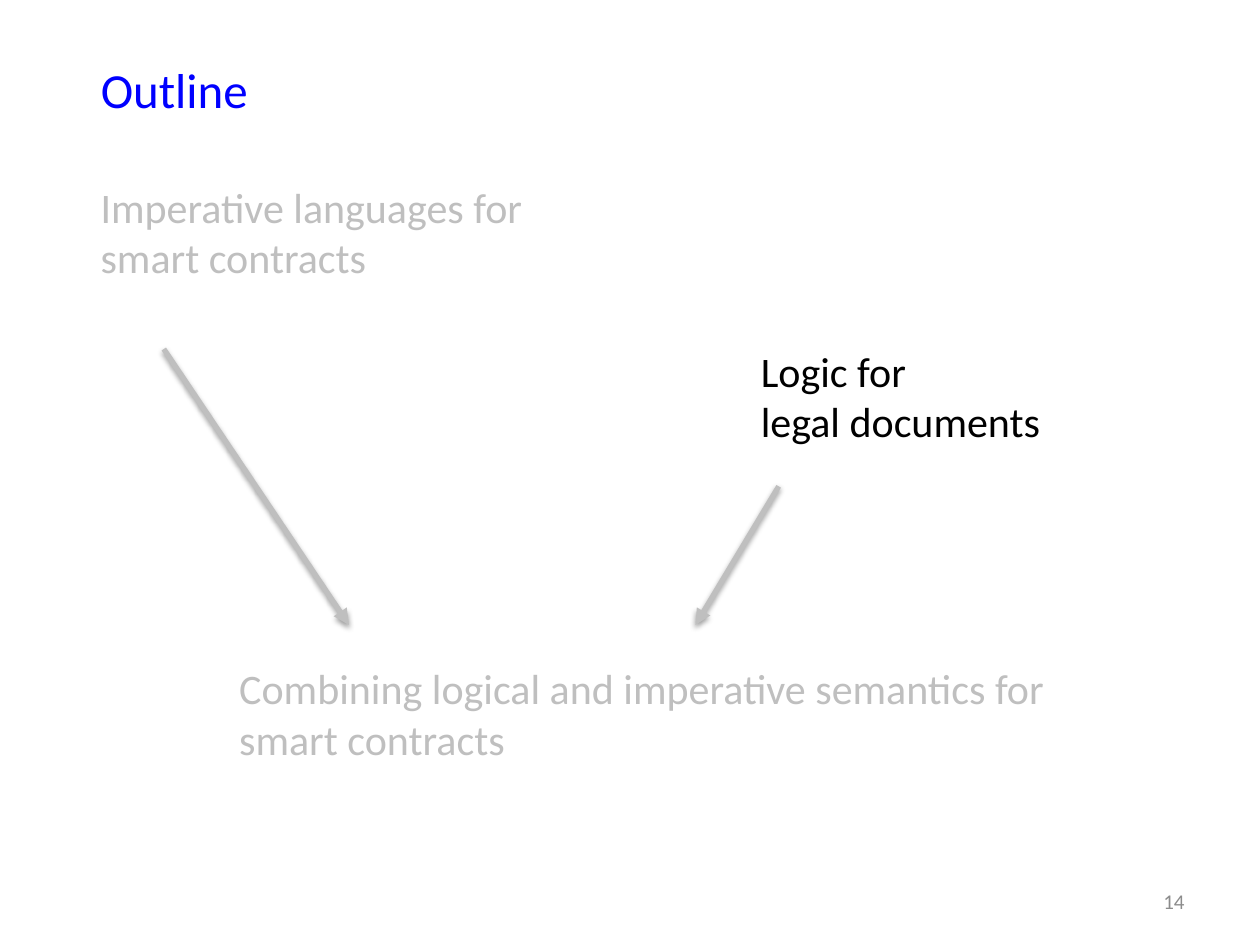
from dataclasses import dataclass

from lxml import etree
from pptx import Presentation, util as u
from pptx.dml.color import RGBColor
from pptx.enum import shapes, text
from pptx.oxml import parse_xml
from pptx.oxml.ns import nsdecls, qn

COLUMNS, ROWS = 100, 75
FONT = "Calibri"
BLACK, BLUE, FADED, NUMBER_GREY = "000000", "0000FF", "BFBFBF", "8C8C8C"

deck = Presentation()
deck.slide_width, deck.slide_height = u.Inches(10), u.Inches(7.5)


@dataclass
class Topic:
    lines: tuple[str, ...]
    column: float
    row: float
    columns: float
    rows: float
    color: str = FADED
    level: int = 0


@dataclass
class Arrow:
    start: tuple[float, float]
    end: tuple[float, float]


def across(columns: float) -> int:
    return round(deck.slide_width * columns / COLUMNS)


def down(rows: float) -> int:
    return round(deck.slide_height * rows / ROWS)


def rgb(color: str) -> RGBColor:
    return RGBColor.from_string(color)


def apply(target, values: dict) -> None:
    for name, value in values.items():
        setattr(target, name, value)


def place(column: float, row: float, columns: float, rows: float) -> dict:
    return {"left": across(column), "top": down(row),
            "width": across(columns), "height": down(rows)}


def write(frame, lines: tuple[str, ...], size: float, color: str,
          **paragraph_format) -> None:
    frame.text = "\n".join(lines)
    for paragraph in frame.paragraphs:
        apply(paragraph, paragraph_format)
        for run in paragraph.runs:
            apply(run.font, {"name": FONT, "size": u.Pt(size)})
            run.font.color.rgb = rgb(color)


def draw_topic(slide, topic: Topic) -> None:
    box = slide.shapes.add_textbox(
        **place(topic.column, topic.row, topic.columns, topic.rows))
    apply(box.text_frame, {"word_wrap": False,
                           "auto_size": text.MSO_AUTO_SIZE.SHAPE_TO_FIT_TEXT})
    write(box.text_frame, topic.lines, 24, topic.color, level=topic.level)


def draw_arrow(slide, arrow: Arrow) -> None:
    (x1, y1), (x2, y2) = arrow.start, arrow.end
    line = slide.shapes.add_connector(
        shapes.MSO_CONNECTOR.STRAIGHT, across(x1), down(y1), across(x2), down(y2))
    line.line.width = u.Pt(3)
    line.line.color.rgb = rgb(FADED)
    # Arrowhead and soft shadow below
    etree.SubElement(line.line._get_or_add_ln(), qn("a:tailEnd"), type="triangle")
    line._element.spPr.append(parse_xml(
        f'<a:effectLst {nsdecls("a")}>'
        '<a:outerShdw blurRad="40000" dist="20000" dir="5400000" rotWithShape="0">'
        '<a:srgbClr val="000000"><a:alpha val="38000"/></a:srgbClr>'
        '</a:outerShdw></a:effectLst>'))


TOPICS = (
    Topic(("Logic for", "legal documents"), 59.4, 26.9, 24.5, 9.1, BLACK),
    Topic(("Imperative languages for", "smart contracts"), 7, 13.9, 36.6, 9.1),
    Topic(("Combining logical and imperative semantics for", "smart contracts"),
          13, 52.1, 71.6, 12.1, level=1),
)
ARROWS = (
    Arrow((13, 27.7), (27.7, 49.6)),
    Arrow((61.8, 38.6), (55.2, 49.6)),
)


def main() -> None:
    slide = deck.slides.add_slide(deck.slide_layouts[5])

    # Title
    title = slide.shapes.title
    apply(title, place(7, 4.2, 89, 5.7))
    apply(title.text_frame, {"word_wrap": True,
                             "vertical_anchor": text.MSO_ANCHOR.TOP,
                             "auto_size": text.MSO_AUTO_SIZE.SHAPE_TO_FIT_TEXT})
    write(title.text_frame, ("Outline",), 28, BLUE, alignment=text.PP_ALIGN.LEFT)

    # Topics and the arrows between them
    for topic in TOPICS:
        draw_topic(slide, topic)
    for arrow in ARROWS:
        draw_arrow(slide, arrow)

    # Slide number
    number = slide.shapes.add_textbox(**place(71.7, 69.5, 23.3, 4))
    apply(number.text_frame, {"word_wrap": True,
                              "vertical_anchor": text.MSO_ANCHOR.MIDDLE})
    write(number.text_frame, ("14",), 12, NUMBER_GREY,
          alignment=text.PP_ALIGN.RIGHT)

    deck.save("out.pptx")


if __name__ == "__main__":
    main()
